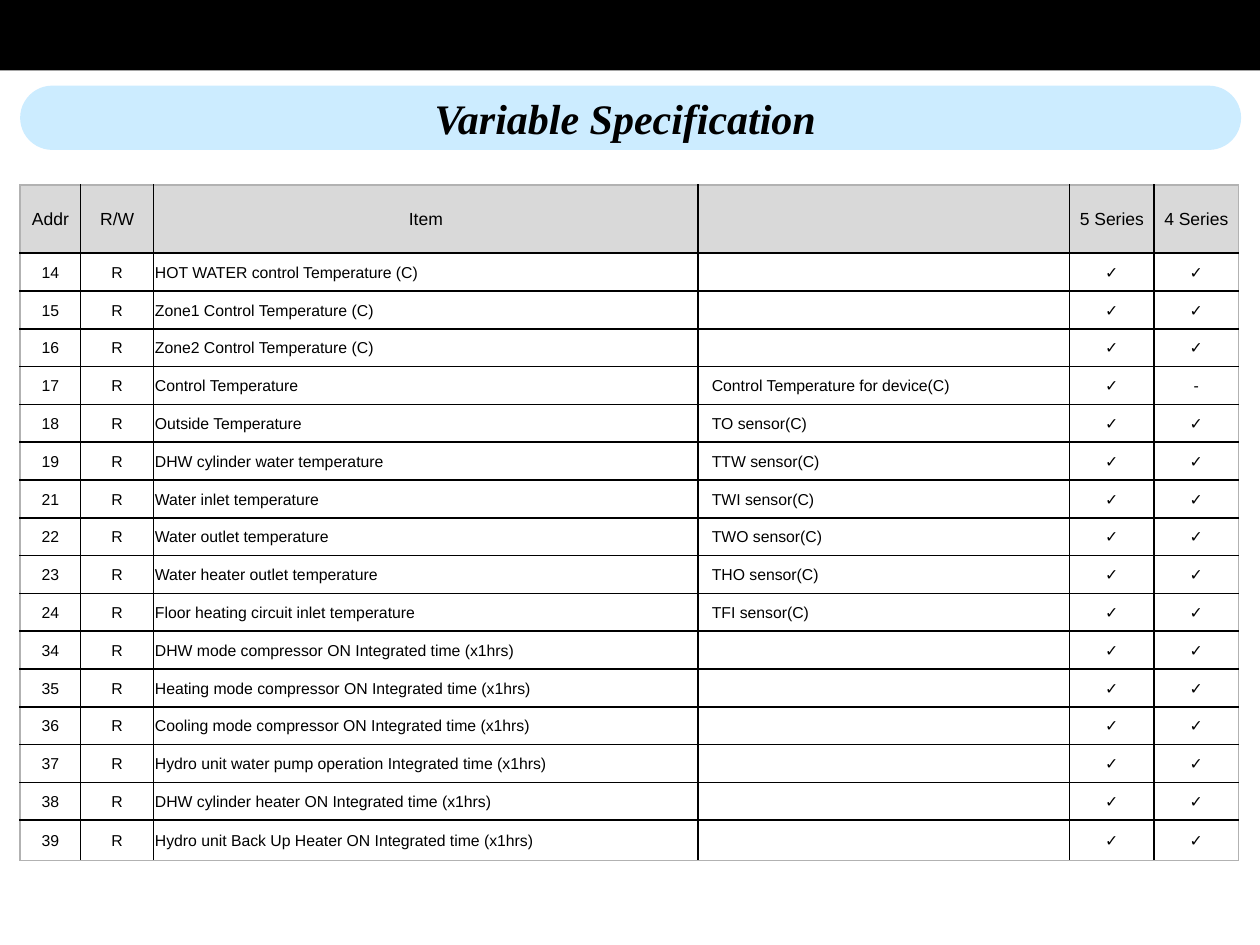
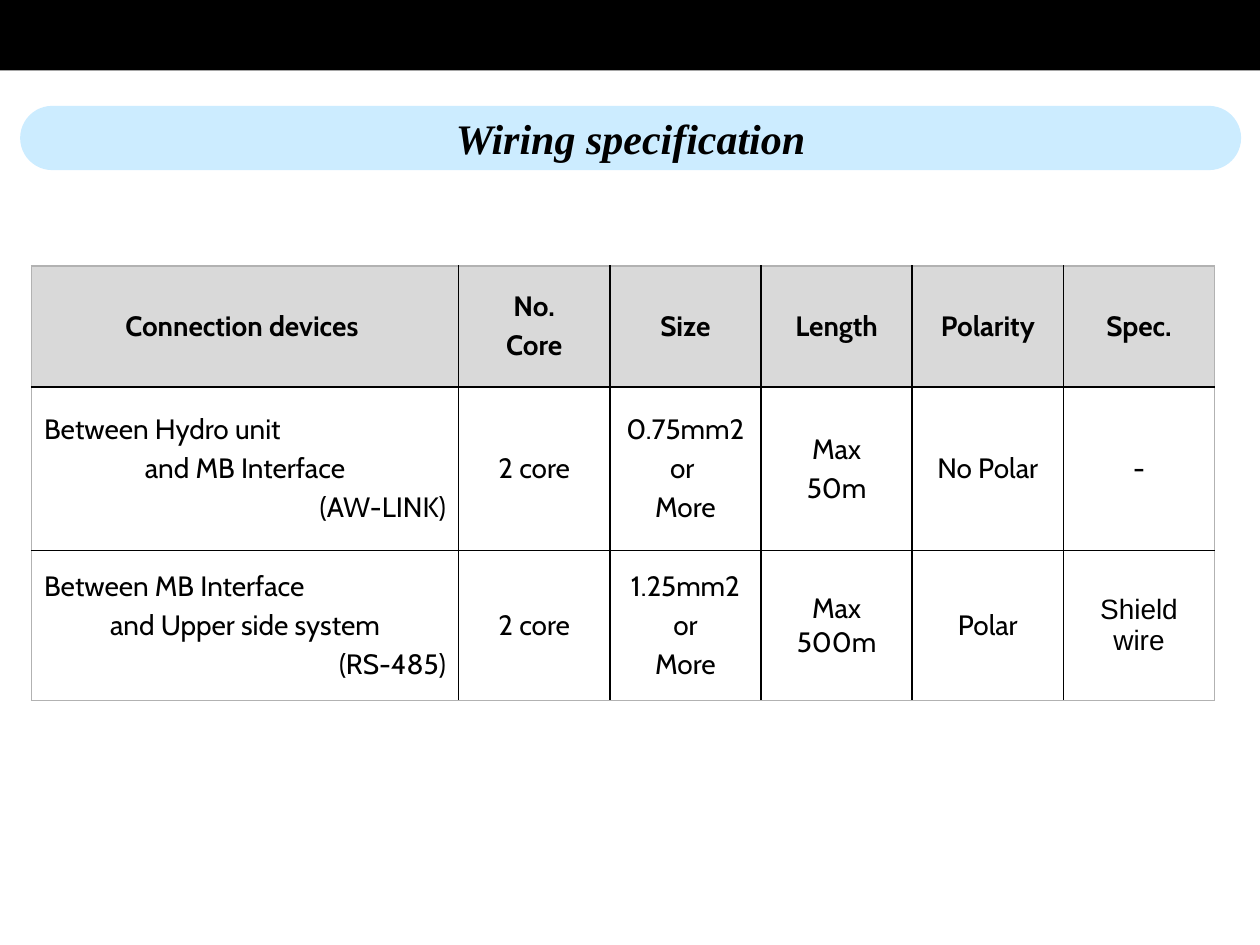
"""Build two slides with the variable and the wiring specification tables."""
from lxml import etree
from pptx import Presentation
from pptx.dml.color import RGBColor
from pptx.enum.shapes import MSO_SHAPE
from pptx.enum.text import MSO_ANCHOR, PP_ALIGN
from pptx.oxml.ns import qn
from pptx.util import Pt

PX = 9144
RECT, PILL = MSO_SHAPE.RECTANGLE, MSO_SHAPE.ROUNDED_RECTANGLE
MIDDLE = MSO_ANCHOR.MIDDLE
ALIGN = {"l": PP_ALIGN.LEFT, "c": PP_ALIGN.CENTER, "r": PP_ALIGN.RIGHT}
THEME = {
    "band": "000000", "pill": "CCECFF", "head": "D9D9D9", "text": "000000",
    "grid": "000000", "frame": "B2B2B2", "grid_pt": 1,
    "title": {"name": "Times New Roman", "size": Pt(24), "bold": True, "italic": True},
    "variable_head": {"name": "Arial", "size": Pt(10)},
    "variable_body": {"name": "Arial", "size": Pt(9)},
    "wiring_head": {"name": "Cabin", "size": Pt(16), "bold": True},
    "wiring_body": {"name": "Cabin", "size": Pt(16), "bold": False},
    "shield": {"name": "Arial", "size": Pt(16), "bold": False},
}

CHECK = "✓"
readings = [
    ("14", "HOT WATER control Temperature (C)", ""),
    ("15", "Zone1 Control Temperature (C)", ""),
    ("16", "Zone2 Control Temperature (C)", ""),
    ("17", "Control Temperature", "Control Temperature for device(C)"),
    ("18", "Outside Temperature", "TO sensor(C)"),
    ("19", "DHW cylinder water temperature", "TTW sensor(C)"),
    ("21", "Water inlet temperature", "TWI sensor(C)"),
    ("22", "Water outlet temperature", "TWO sensor(C)"),
    ("23", "Water heater outlet temperature", "THO sensor(C)"),
    ("24", "Floor heating circuit inlet temperature", "TFI sensor(C)"),
    ("34", "DHW mode compressor ON Integrated time (x1hrs)", ""),
    ("35", "Heating mode compressor ON Integrated time (x1hrs)", ""),
    ("36", "Cooling mode compressor ON Integrated time (x1hrs)", ""),
    ("37", "Hydro unit water pump operation Integrated time (x1hrs)", ""),
    ("38", "DHW cylinder heater ON Integrated time (x1hrs)", ""),
    ("39", "Hydro unit Back Up Heater ON Integrated time (x1hrs)", ""),
]
variable_rows = [("Addr", "R/W", "Item", "", "5 Series", "4 Series")]
for addr, item, note in readings:
    variable_rows.append((addr, "R", item, note, CHECK, "-" if addr == "17" else CHECK))

wiring_rows = [
    ("Connection devices ", "No.\nCore", "Size", "Length", "Polarity", "Spec."),
    ("Between Hydro unit\nand MB Interface\n(AW-LINK)", "2 core", "0.75mm2\nor \nMore",
     "Max\n50m", "No Polar", "-"),
    ("Between MB Interface\nand Upper side system\n(RS-485)", "2 core", "1.25mm2\nor\nMore",
     "Max 500m", "Polar", "Shield wire"),
]

SLIDES = [
    {"title": "Variable Specification ", "title_top": 68, "style": "variable",
     "left": 16, "top": 147, "rows": variable_rows,
     "widths": [48, 58, 432, 295, 67, 67], "heights": [54] + [30] * 15 + [32],
     "aligns": ["c", "c", "l", "l", "c", "c"],
     "insets": [(1, 1, 1, 0)] * 3 + [(11, 1, 1, 0)] + [(1, 1, 1, 0)] * 2},
    {"title": "Wiring specification", "title_top": 84, "style": "wiring",
     "left": 25, "top": 211, "rows": wiring_rows,
     "widths": [339] + [120] * 5, "heights": [96, 130, 119],
     "aligns": ["lcr"] + ["c"] * 5, "insets": [(10, 5, 10, 5)] * 6},
]


def write(tf, text, aligns, fmt):
    """Fill a text frame, one paragraph a line, cycling through the alignments."""
    for i, line in enumerate(text.split("\n")):
        p = tf.add_paragraph() if i else tf.paragraphs[0]
        p.alignment = ALIGN[aligns[i % len(aligns)]]
        if i:
            p.space_before = Pt(3)
        if not line:
            etree.SubElement(p._p, qn("a:endParaRPr"), sz=str(int(fmt["size"].pt * 100)))
            continue
        r = p.add_run()
        r.text = line
        r.font.color.rgb = RGBColor.from_string(THEME["text"])
        for key, value in fmt.items():
            setattr(r.font, key, value)


def add_bar(s, kind, box, color):
    """Add a plain filled shape without line or shadow."""
    sp = s.shapes.add_shape(kind, *[v * PX for v in box])
    sp.shadow.inherit = False
    sp.fill.solid()
    sp.fill.fore_color.rgb = RGBColor.from_string(color)
    sp.line.fill.background()
    return sp


prs = Presentation()
prs.slide_width, prs.slide_height = 1000 * PX, 750 * PX

for page in SLIDES:
    s = prs.slides.add_slide(prs.slide_layouts[6])
    add_bar(s, RECT, (0, 0, 1000, 56), THEME["band"])
    sp = add_bar(s, PILL, (16, page["title_top"], 969, 51), THEME["pill"])
    sp.adjustments[0] = 0.5
    sp.text_frame.word_wrap = False
    sp.text_frame.vertical_anchor = MIDDLE
    write(sp.text_frame, page["title"], "c", THEME["title"])

    rows, widths, heights = page["rows"], page["widths"], page["heights"]
    box = (page["left"], page["top"], sum(widths), sum(heights))
    table = s.shapes.add_table(len(rows), len(widths), *[v * PX for v in box]).table
    table.first_row = table.horz_banding = False
    for column, width in zip(table.columns, widths):
        column.width = width * PX
    for row, height in zip(table.rows, heights):
        row.height = height * PX

    for i, texts in enumerate(rows):
        for j, text in enumerate(texts):
            cell = table.cell(i, j)
            cell.vertical_anchor = MIDDLE
            for side, inset in zip(("left", "top", "right", "bottom"), page["insets"][j]):
                setattr(cell, f"margin_{side}", inset * PX)
            outer = {"L": j == 0, "R": j == len(widths) - 1,
                     "T": i == 0, "B": i == len(rows) - 1}
            for side, is_outer in outer.items():
                ln = etree.SubElement(cell._tc.get_or_add_tcPr(), qn(f"a:ln{side}"),
                                      w=str(Pt(THEME["grid_pt"])))
                fill = etree.SubElement(ln, qn("a:solidFill"))
                etree.SubElement(fill, qn("a:srgbClr"),
                                 val=THEME["frame" if is_outer else "grid"])
            if i == 0:
                cell.fill.solid()
                cell.fill.fore_color.rgb = RGBColor.from_string(THEME["head"])
            else:
                cell.fill.background()
            part = "body" if i else "head"
            style = "shield" if text == "Shield wire" else f"{page['style']}_{part}"
            write(cell.text_frame, text, page["aligns"][j] if i else "c", THEME[style])

prs.save("out.pptx")
